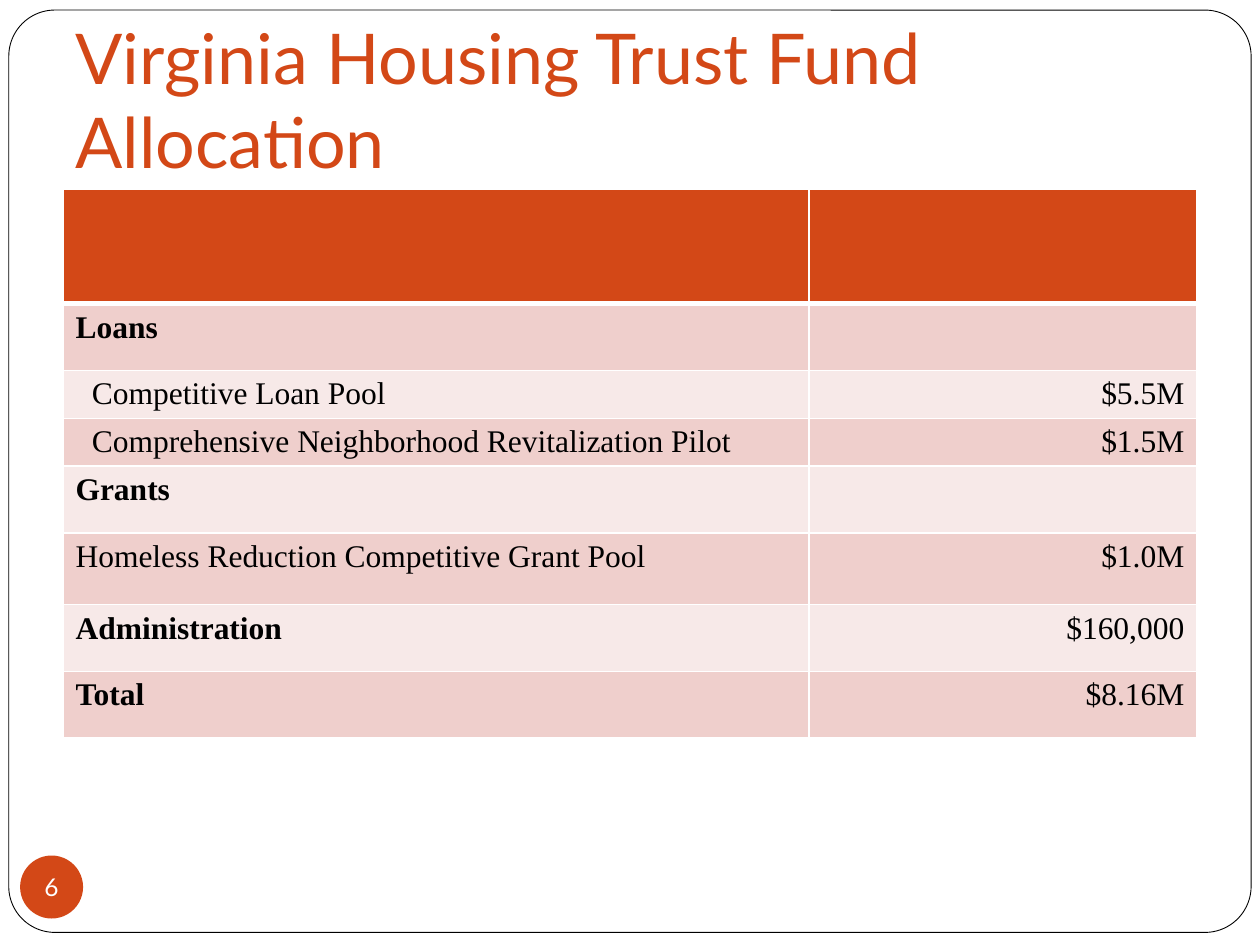
from lxml import etree
from pptx import Presentation
from pptx.dml.color import RGBColor
from pptx.enum.shapes import MSO_SHAPE
from pptx.enum.text import MSO_ANCHOR, MSO_AUTO_SIZE, PP_ALIGN
from pptx.oxml.ns import qn
from pptx.util import Inches, Pt

ROUNDED, OVAL = MSO_SHAPE.ROUNDED_RECTANGLE, MSO_SHAPE.OVAL
LEFT, CENTER, RIGHT = PP_ALIGN.LEFT, PP_ALIGN.CENTER, PP_ALIGN.RIGHT
BOTTOM, MIDDLE = MSO_ANCHOR.BOTTOM, MSO_ANCHOR.MIDDLE
NO_AUTOFIT = MSO_AUTO_SIZE.NONE
TITLE_ONLY = 5

ORANGE, WHITE, BLACK = "D34817", "FFFFFF", "000000"
BANDS = ("F7E9E8", "EFCFCC")
HEADING_FONT, TABLE_FONT = "Lato", "Times New Roman"
CELL_MARGIN, ITEM_INDENT = 0.1, 0.13

COLUMN_WIDTHS = (5.92, 3.08)
HEADER_HEIGHT = 0.91
ALLOCATIONS = (
    ("Loans", "", 0.53, True, 0),
    ("Competitive Loan Pool", "$5.5M", 0.38, False, 1),
    ("Comprehensive Neighborhood Revitalization Pilot", "$1.5M", 0.38, False, 1),
    ("Grants", "", 0.53, True, 0),
    ("Homeless Reduction Competitive Grant Pool", "$1.0M", 0.57, False, 0),
    ("Administration", "$160,000", 0.53, True, 0),
    ("Total", "$8.16M", 0.53, True, 0),
)


def color(value):
    """Turn a hex string into a colour."""
    return RGBColor.from_string(value)


def write(frame, text, *, size, font, ink=BLACK, bold=False, align=LEFT):
    """Write one formatted paragraph into a text frame."""
    paragraph = frame.paragraphs[0]
    paragraph.alignment = align
    run = paragraph.add_run()
    run.text = text
    run.font.size = Pt(size)
    run.font.name = font
    run.font.bold = bold
    run.font.color.rgb = color(ink)


def set_margins(frame, left, top, right, bottom):
    """Set the insets of a text frame in inches."""
    frame.margin_left, frame.margin_top = Inches(left), Inches(top)
    frame.margin_right, frame.margin_bottom = Inches(right), Inches(bottom)


def add_panel(slide, kind, box, fill, line=None):
    """Add a flat preset shape with an optional thin outline."""
    panel = slide.shapes.add_shape(kind, *map(Inches, box))
    panel.shadow.inherit = False
    panel.fill.solid()
    panel.fill.fore_color.rgb = color(fill)
    if line:
        panel.line.color.rgb = color(line)
        panel.line.width = Pt(0.5)
    else:
        panel.line.fill.background()
    return panel


def add_title(slide, text):
    """Place and fill the title placeholder."""
    title = slide.shapes.title
    title.left, title.top, title.width, title.height = map(Inches, (0.5, 0.3, 9, 1.25))
    frame = title.text_frame
    frame.auto_size = NO_AUTOFIT
    frame.word_wrap = True
    frame.vertical_anchor = BOTTOM
    set_margins(frame, 0.1, 0.05, 0.1, 0.1)
    write(frame, text, size=40, font=HEADING_FONT, ink=ORANGE)


def add_frame(slide):
    """Put the rounded page frame behind the title."""
    page = add_panel(slide, ROUNDED, (0.07, 0.08, 9.86, 7.32), WHITE, BLACK)
    page.adjustments[0] = 0.05
    slide.shapes.title.element.addprevious(page.element)


def add_page_number(slide, number):
    """Add the round page-number badge."""
    badge = add_panel(slide, OVAL, (0.16, 6.79, 0.5, 0.5), ORANGE)
    frame = badge.text_frame
    frame.word_wrap = False
    frame.vertical_anchor = MIDDLE
    set_margins(frame, 0, 0, 0, 0)
    write(frame, number, size=14, font=HEADING_FONT, ink=WHITE, align=CENTER)


def style_cell(cell, fill, bottom=1):
    """Give a cell white borders and a solid fill."""
    properties = cell._tc.get_or_add_tcPr()
    for side, width in (("L", 1), ("R", 1), ("T", 1), ("B", bottom)):
        border = etree.SubElement(properties, qn(f"a:ln{side}"), w=str(Pt(width)))
        paint = etree.SubElement(border, qn("a:solidFill"))
        etree.SubElement(paint, qn("a:srgbClr"), val=WHITE)
    cell.fill.solid()
    cell.fill.fore_color.rgb = color(fill)


def add_allocations(slide):
    """Build the allocation table with a blank header and banded rows."""
    heights = [HEADER_HEIGHT] + [row[2] for row in ALLOCATIONS]
    table = slide.shapes.add_table(
        len(heights), len(COLUMN_WIDTHS), Inches(0.5), Inches(1.5),
        Inches(sum(COLUMN_WIDTHS)), Inches(sum(heights))).table
    for column, width in zip(table.columns, COLUMN_WIDTHS):
        column.width = Inches(width)
    for row, height in zip(table.rows, heights):
        row.height = Inches(height)
    for header in table.rows[0].cells:
        style_cell(header, ORANGE, bottom=3)
    for index, (purpose, amount, _, bold, level) in enumerate(ALLOCATIONS, 1):
        purpose_cell, amount_cell = table.rows[index].cells
        for cell in (purpose_cell, amount_cell):
            style_cell(cell, BANDS[index % 2])
        purpose_cell.margin_left = Inches(CELL_MARGIN + level * ITEM_INDENT)
        write(purpose_cell.text_frame, purpose, size=18, font=TABLE_FONT, bold=bold)
        if amount:
            write(amount_cell.text_frame, amount, size=18, font=TABLE_FONT, align=RIGHT)


def main():
    """Build and save the slide."""
    deck = Presentation()
    deck.slide_width, deck.slide_height = Inches(10), Inches(7.5)
    slide = deck.slides.add_slide(deck.slide_layouts[TITLE_ONLY])
    add_title(slide, "Virginia Housing Trust Fund Allocation")
    add_frame(slide)
    add_page_number(slide, "6")
    add_allocations(slide)
    deck.save("out.pptx")


if __name__ == "__main__":
    main()
